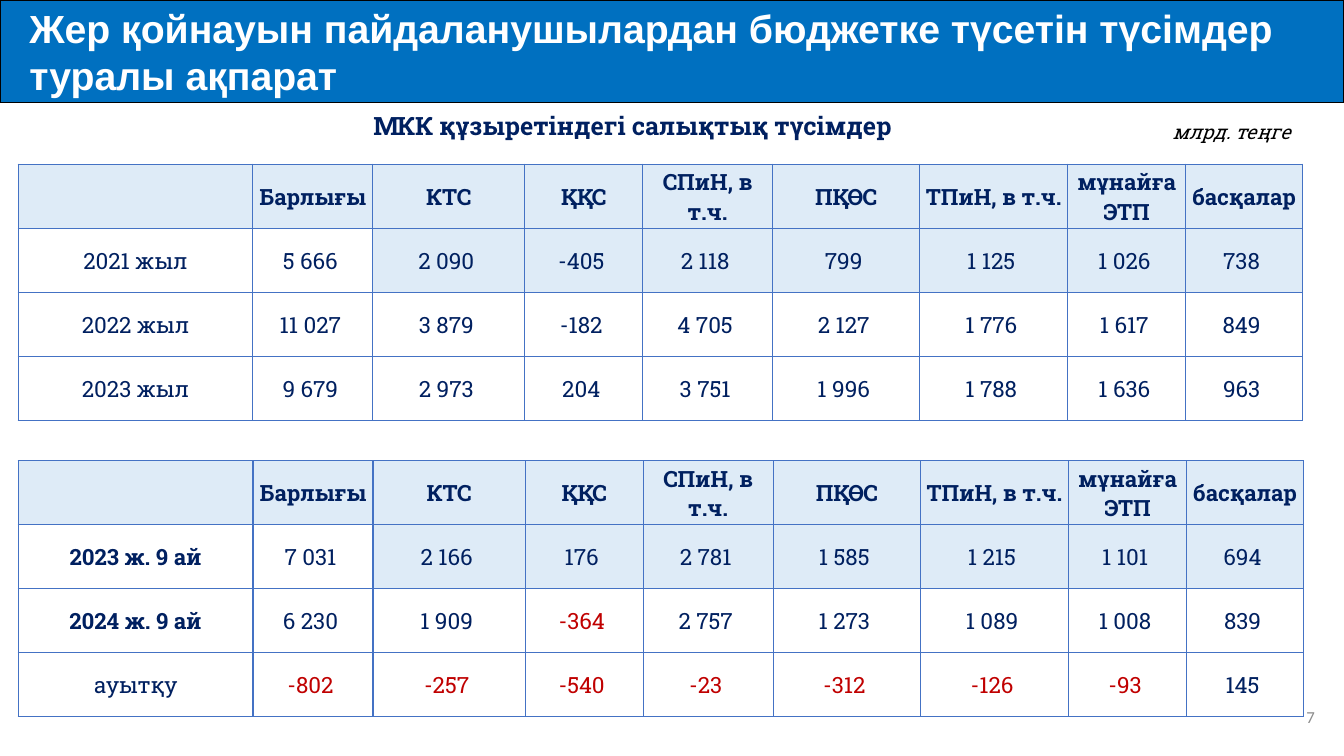
import pptx
import pptx.dml.color
import pptx.enum.text
import pptx.oxml
import pptx.oxml.ns
import pptx.util

Inch = pptx.util.Inches
Align = pptx.enum.text.PP_ALIGN
Middle = pptx.enum.text.MSO_ANCHOR.MIDDLE
WIDE, HIGH = 13.33, 7.5
NAVY, RED, PALE, EDGE = "002060", "C00000", "DEEBF7", "4472C4"
SLAB = "Roboto Slab"
COLS = [2.33, 1.19, 1.51, 1.17, 1.29, 1.46, 1.47, 1.17, 1.16]
HEAD = ["", "Барлығы", "КТС", "ҚҚС", "СПиН, в т.ч.", "ПҚӨС",
        "ТПиН, в т.ч.", "мұнайға ЭТП", "басқалар"]
YEARS = [
    ["2021 жыл", "5 666", "2 090", "-405", "2 118", "799", "1 125", "1 026", "738"],
    ["2022 жыл", "11 027", "3 879", "-182", "4 705", "2 127", "1 776", "1 617", "849"],
    ["2023 жыл", "9 679", "2 973", "204", "3 751", "1 996", "1 788", "1 636", "963"],
]
MONTHS = [
    ["2023 ж. 9 ай", "7 031", "2 166", "176", "2 781", "1 585", "1 215", "1 101", "694"],
    ["2024 ж. 9 ай", "6 230", "1 909", "-364", "2 757", "1 273", "1 089", "1 008", "839"],
    ["ауытқу", "-802", "-257", "-540", "-23", "-312", "-126", "-93", "145"],
]


def paint(hue):
    return pptx.dml.color.RGBColor.from_string(hue)


def style(para, size, face, hue, align, bold=False, slant=False):
    para.alignment = align
    for run in para.runs:
        font = run.font
        font.size, font.name = pptx.util.Pt(size), face
        font.bold, font.italic = bold, slant
        font.color.rgb = paint(hue)


def banner(slide, box, text):
    title = slide.shapes.title
    title.left, title.top, title.width, title.height = map(Inch, box)
    title.fill.solid()
    title.fill.fore_color.rgb = paint("0070C0")
    title.line.color.rgb = paint("000000")
    title.line.width = pptx.util.Pt(1)
    frame = title.text_frame
    frame.text = text
    frame.auto_size = pptx.enum.text.MSO_AUTO_SIZE.NONE
    frame.vertical_anchor = Middle
    frame.margin_left = Inch(0.29)
    style(frame.paragraphs[0], 28, "Arial", "FFFFFF", Align.LEFT, bold=True)


def label(slide, box, text, *look, anchor=pptx.enum.text.MSO_ANCHOR.TOP, **more):
    frame = slide.shapes.add_textbox(*map(Inch, box)).text_frame
    frame.word_wrap = True
    frame.vertical_anchor = anchor
    frame.text = text
    style(frame.paragraphs[0], *look, **more)


def border(cell):
    props = cell._tc.get_or_add_tcPr()
    for side in "LRTB":
        props.append(pptx.oxml.parse_xml(
            f'<a:ln{side} {pptx.oxml.ns.nsdecls("a")} w="12700"><a:solidFill>'
            f'<a:srgbClr val="{EDGE}"/></a:solidFill></a:ln{side}>'))


def grid(slide, box, body, marks=False):
    """Draw a table; marks shows negatives in red and month labels in bold."""
    rows = [HEAD] + body
    table = slide.shapes.add_table(len(rows), len(COLS), *map(Inch, box)).table
    table.first_row = table.horz_banding = False
    for col, share in zip(table.columns, COLS):
        col.width = Inch(box[2] * share / sum(COLS))
    for r, row in enumerate(rows):
        for c, text in enumerate(row):
            cell = table.cell(r, c)
            border(cell)
            if r == 0 or (r == 1 and c > 1):
                cell.fill.solid()
                cell.fill.fore_color.rgb = paint(PALE)
            else:
                cell.fill.background()
            cell.margin_left = cell.margin_top = Inch(0.01)
            cell.margin_right = Inch(0.06 if r and c else 0.01)
            cell.margin_bottom = 0
            cell.vertical_anchor = Middle
            cell.text = text
            hue = RED if marks and text.startswith("-") else NAVY
            bold = r == 0 or (marks and c == 0 and r < len(body))
            style(cell.text_frame.paragraphs[0], 16, SLAB, hue, Align.CENTER, bold)


def main():
    deck = pptx.Presentation()
    deck.slide_width, deck.slide_height = Inch(WIDE), Inch(HIGH)
    slide = deck.slides.add_slide(deck.slide_layouts[5])
    banner(slide, (0, 0, WIDE, 1.02),
           "Жер қойнауын пайдаланушылардан бюджетке түсетін түсімдер туралы ақпарат")
    label(slide, (10.14, 6.91, 3, 0.4), "7", 12, "Calibri", "8C8C8C",
          Align.RIGHT, anchor=Middle)
    label(slide, (1.09, 1.05, 10.37, 0.4), "МКК құзыретіндегі салықтық түсімдер",
          18, SLAB, NAVY, Align.CENTER, bold=True)
    label(slide, (11.53, 1.14, 1.8, 0.34), "млрд. теңге",
          14, SLAB, "000000", Align.LEFT, slant=True)
    grid(slide, (0.18, 1.63, 12.74, 2.54), YEARS)
    grid(slide, (0.18, 4.57, 12.75, 2.54), MONTHS, marks=True)
    deck.save("out.pptx")


if __name__ == "__main__":
    main()
